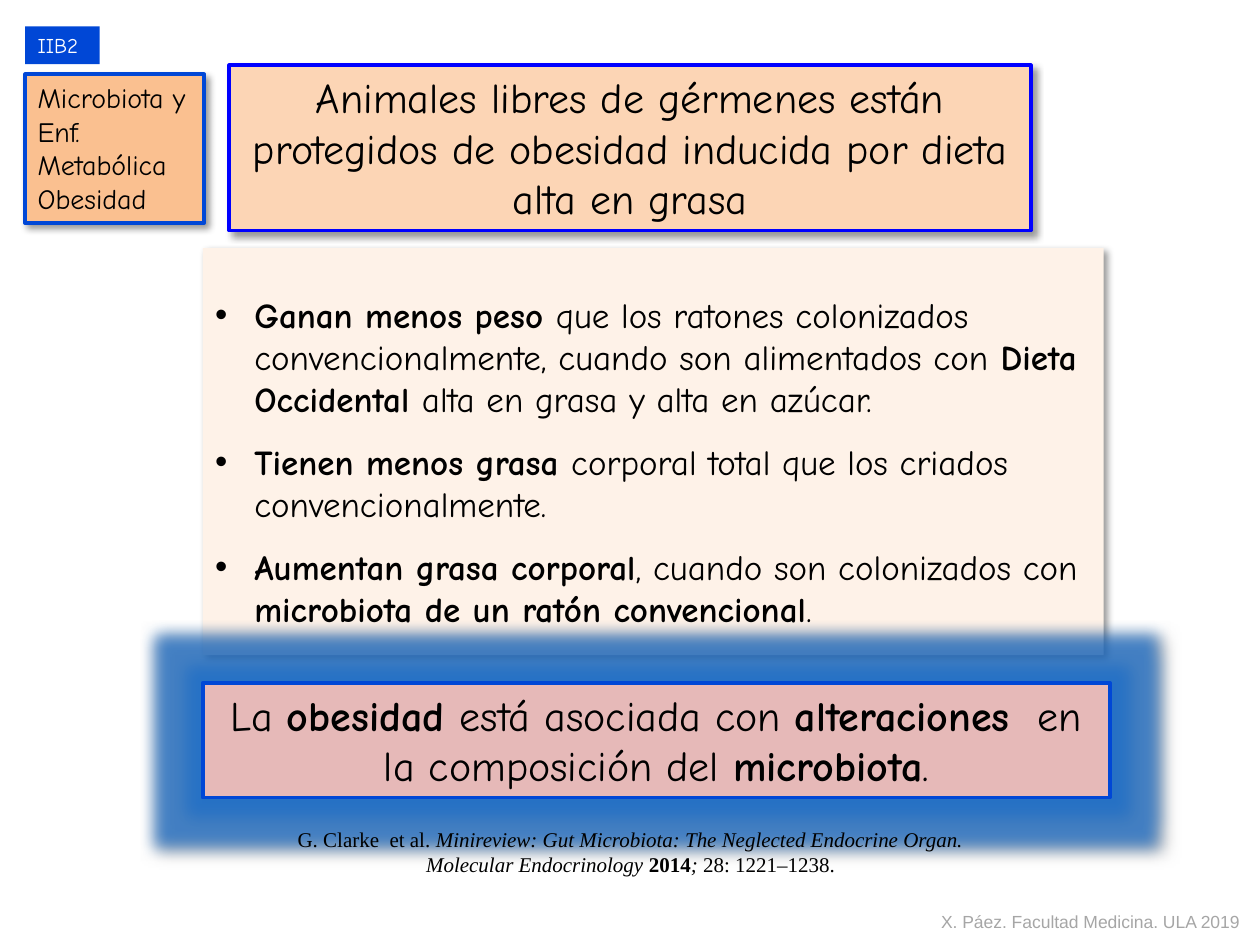
from dataclasses import dataclass

from lxml import etree
from pptx import Presentation
from pptx.dml.color import RGBColor
from pptx.enum.shapes import MSO_SHAPE
from pptx.enum.text import MSO_ANCHOR, PP_ALIGN
from pptx.oxml.ns import qn
from pptx.util import Inches, Pt

RECTANGLE = MSO_SHAPE.RECTANGLE
TOP = MSO_ANCHOR.TOP
LEFT, CENTER = PP_ALIGN.LEFT, PP_ALIGN.CENTER
SLIDE_WIDTH, SLIDE_HEIGHT = Inches(10), Inches(7.5)


@dataclass(frozen=True)
class Theme:
    ink: str = "000000"
    white: str = "FFFFFF"
    muted: str = "A6A6A6"
    blue: str = "0047D6"
    title_border: str = "0000FF"
    title_fill: str = "FCD5B5"
    topic_fill: str = "FAC090"
    findings_fill: str = "FEF2E8"
    conclusion_fill: str = "E6B9B8"
    glow: str = "1F6FC8"
    font: str = "Comic Neue"
    citation_font: str = "Times New Roman"
    footer_font: str = "Arial"
    heading: int = 24
    body: int = 20
    topic: int = 16
    small: int = 12
    footer: int = 10
    border: float = 2.25


THEME = Theme()


def place(left, top, width, height):
    """Turn percentages of the slide's size into lengths."""
    return (int(SLIDE_WIDTH * left / 100), int(SLIDE_HEIGHT * top / 100),
            int(SLIDE_WIDTH * width / 100), int(SLIDE_HEIGHT * height / 100))


def add_effect_color(effect, color, alpha):
    fill = etree.SubElement(effect, qn("a:srgbClr"), val=color)
    etree.SubElement(fill, qn("a:alpha"), val=str(alpha * 1000))


def add_effects(box, glow):
    """Add a soft shadow to the lower right, and a glow if asked."""
    box.shadow.inherit = False
    effects = box._element.spPr.find(qn("a:effectLst"))
    if glow:
        halo = etree.SubElement(effects, qn("a:glow"), rad=str(Pt(18)))
        add_effect_color(halo, THEME.glow, 75)
    shadow = etree.SubElement(
        effects, qn("a:outerShdw"), blurRad=str(Pt(4)), dist=str(Pt(3)),
        dir=str(45 * 60000), algn="tl", rotWithShape="0")
    add_effect_color(shadow, THEME.ink, 40)


def add_panel(slide, area, fill, border=None, shadow=True, glow=False):
    box = slide.shapes.add_shape(RECTANGLE, *place(*area))
    box.fill.solid()
    box.fill.fore_color.rgb = RGBColor.from_string(fill)
    if border:
        box.line.color.rgb = RGBColor.from_string(border)
        box.line.width = Pt(THEME.border)
    else:
        box.line.fill.background()
    if shadow:
        add_effects(box, glow)
    else:
        box.shadow.inherit = False
    return box


def add_bullet(para):
    properties = para._p.get_or_add_pPr()
    indent = Inches(0.31)
    properties.set("marL", str(indent))
    properties.set("indent", str(-indent))
    etree.SubElement(properties, qn("a:buFont"), typeface="Arial")
    etree.SubElement(properties, qn("a:buChar"), char="•")


def write(box, paragraphs, size, font=THEME.font, color=THEME.ink,
          align=LEFT, wrap=True, bullets=False, gap=0):
    """Fill a box; a paragraph is a list of (text, style), style from 'b', 'i'."""
    frame = box.text_frame
    frame.word_wrap = wrap
    frame.vertical_anchor = TOP
    for index, spans in enumerate(paragraphs):
        para = frame.add_paragraph() if index else frame.paragraphs[0]
        para.alignment = align
        if index and gap:
            para.space_before = Pt(gap)
        if bullets:
            add_bullet(para)
        for text, style in spans:
            span = para.add_run()
            span.text = text
            span.font.name = font
            span.font.size = Pt(size)
            span.font.bold = "b" in style
            span.font.italic = "i" in style
            span.font.color.rgb = RGBColor.from_string(color)


def add_label(slide, area, paragraphs, size, **text_format):
    box = slide.shapes.add_textbox(*place(*area))
    write(box, paragraphs, size, **text_format)


def add_findings(slide):
    box = add_panel(slide, (16.1, 26.27, 71.5, 43.07), THEME.findings_fill)
    box.text_frame.margin_top = Inches(0.36)
    write(box, [
        [("Ganan menos peso ", "b"),
         ("que los ratones colonizados convencionalmente, "
          "cuando son alimentados con ", ""),
         ("Dieta Occidental ", "b"),
         ("alta en grasa y alta en azúcar.", "")],
        [("Tienen menos grasa ", "b"),
         ("corporal total que los criados convencionalmente.", "")],
        [("Aumentan grasa corporal", "b"),
         (", cuando son colonizados con ", ""),
         ("microbiota de un ratón convencional", "b"), (".", "")],
    ], THEME.body, bullets=True, gap=12)


def add_conclusion(slide):
    box = add_panel(slide, (16.1, 72.27, 72, 12.13), THEME.conclusion_fill,
                    THEME.blue, glow=True)
    write(box, [[
        ("La ", ""), ("obesidad ", "b"), ("está asociada con ", ""),
        ("alteraciones", "b"), ("  en la composición del ", ""),
        ("microbiota", "b"), (".", ""),
    ]], THEME.heading, align=CENTER)


def add_headings(slide):
    code = add_panel(slide, (2, 2.8, 5.9, 4), THEME.blue, shadow=False)
    write(code, [[("IIB2", "")]], THEME.small, color=THEME.white, wrap=False)

    topic = add_panel(slide, (2, 7.87, 14.2, 15.73), THEME.topic_fill, THEME.blue)
    write(topic, [[("Microbiota y Enf. Metabólica", "")], [("Obesidad", "")]],
          THEME.topic)

    title = add_panel(slide, (18.2, 6.93, 63.6, 17.47), THEME.title_fill,
                      THEME.title_border)
    write(title, [[("Animales libres de gérmenes están protegidos de obesidad "
                    "inducida por dieta alta en grasa", "")]],
          THEME.heading, align=CENTER)


def add_credits(slide):
    add_label(slide, (21.7, 86.8, 56.7, 6.67), [[
        ("G. Clarke  et al. ", ""),
        ("Minireview: Gut Microbiota: The Neglected Endocrine Organ. "
         "Molecular Endocrinology ", "i"),
        ("2014", "b"), ("; ", "i"), ("28: 1221–1238.", ""),
    ]], THEME.small, font=THEME.citation_font, align=CENTER)
    add_label(slide, (73.7, 95.73, 25.9, 3.6),
              [[("X. Páez. Facultad Medicina. ULA 2019", "")]], THEME.footer,
              font=THEME.footer_font, color=THEME.muted, wrap=False)


def main():
    deck = Presentation()
    deck.slide_width, deck.slide_height = SLIDE_WIDTH, SLIDE_HEIGHT
    page = deck.slides.add_slide(deck.slide_layouts[6])
    add_findings(page)
    add_conclusion(page)
    add_headings(page)
    add_credits(page)
    deck.save("out.pptx")


if __name__ == "__main__":
    main()
